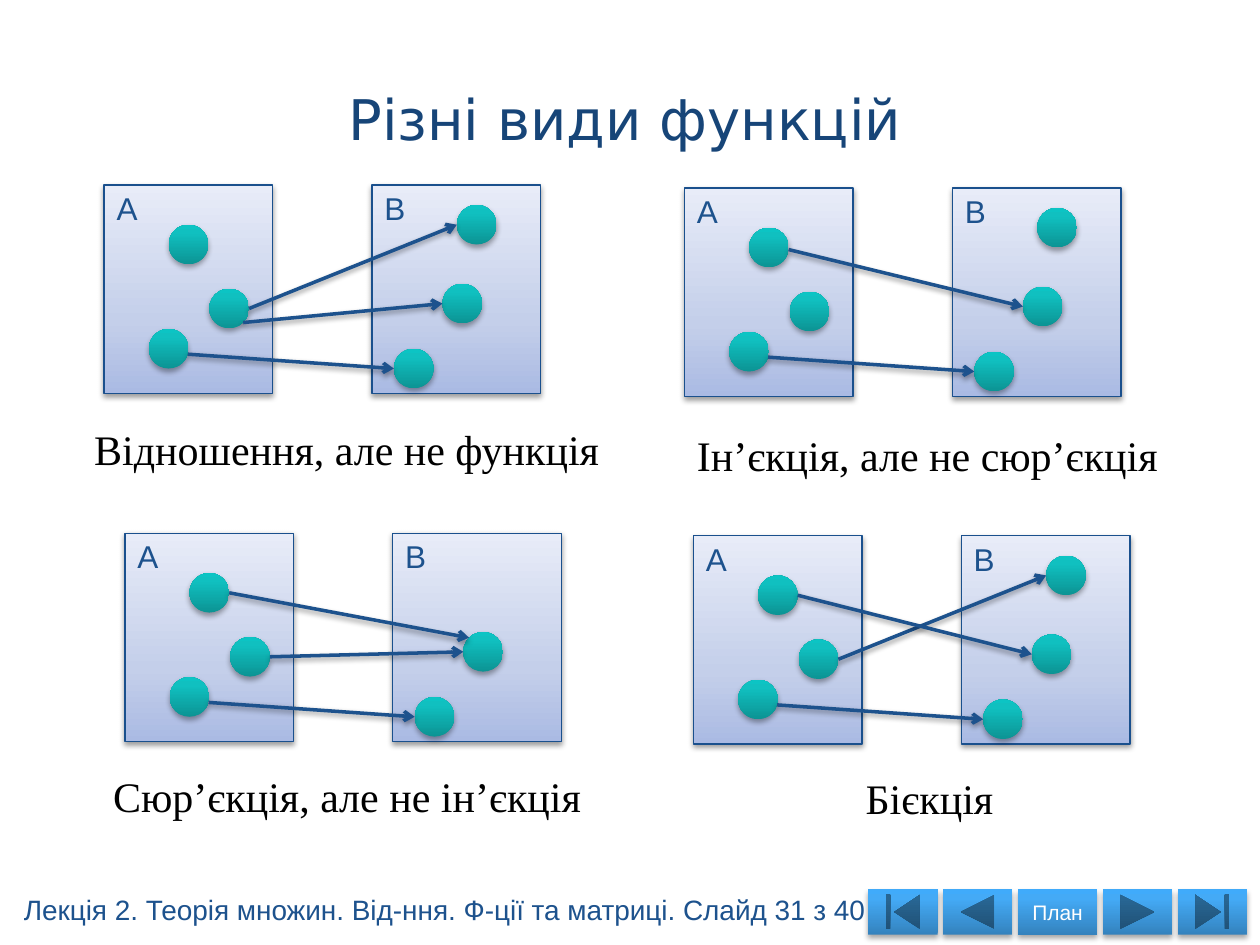
from dataclasses import dataclass
from math import cos, radians, sin

from pptx import Presentation
from pptx.dml.color import RGBColor
from pptx.enum.shapes import MSO_CONNECTOR as Link, MSO_SHAPE as Kind
from pptx.enum.text import MSO_ANCHOR as Anchor, MSO_AUTO_SIZE as Auto, PP_ALIGN as Align
from pptx.oxml import parse_xml
from pptx.oxml.ns import nsdecls
from pptx.util import Cm, Pt


@dataclass(frozen=True)
class Theme:
    title: str = "174578"
    ink: str = "1D528D"
    edge: str = "1A508D"
    black: str = "000000"
    white: str = "FFFFFF"
    panel: tuple = ((0, "AABAE3"), (35, "C4CFEA"), (100, "E8ECF8"))
    ball: tuple = ((0, "0C9494"), (80, "10C0C0"), (100, "0CC4C4"))
    key: tuple = ((0, "3483BE"), (80, "44AAF6"), (100, "40ABFB"))
    soft: tuple = (38, 20000)
    deep: tuple = (35, 23000)
    sans: str = "Arial"
    serif: str = "Times New Roman"
    head: str = "DejaVu Sans"
    huge: int = 32
    big: int = 24
    mid: int = 18
    note: int = 16
    tiny: int = 12


def write(frame, text, size, font, color, align=Align.LEFT, anchor=Anchor.TOP, wrap=False):
    frame.word_wrap = wrap
    frame.vertical_anchor = anchor
    par = frame.paragraphs[0]
    par.alignment = align
    run = par.add_run()
    run.text = text
    run.font.size = Pt(size)
    run.font.name = font
    run.font.color.rgb = RGBColor.from_string(color)


def shade(props, depth):
    alpha, dist = depth
    props.append(parse_xml(
        f'<a:effectLst {nsdecls("a")}><a:outerShdw blurRad="40000" dist="{dist}" '
        f'dir="5400000" rotWithShape="0"><a:srgbClr val="000000">'
        f'<a:alpha val="{alpha * 1000}"/></a:srgbClr></a:outerShdw></a:effectLst>'))


def blend(props, stops):
    marks = "".join(f'<a:gs pos="{pos * 1000}"><a:srgbClr val="{color}"/></a:gs>'
                    for pos, color in stops)
    props.append(parse_xml(
        f'<a:gradFill {nsdecls("a")} rotWithShape="1"><a:gsLst>{marks}</a:gsLst>'
        f'<a:lin ang="16200000" scaled="0"/></a:gradFill>'))


class Board:
    def __init__(self, slide, theme):
        self.slide = slide
        self.theme = theme

    def title(self, text, x, y, wide, high):
        head = self.slide.shapes.title
        head.left, head.top, head.width, head.height = map(Cm, (x, y, wide, high))
        look = self.theme
        write(head.text_frame, text, look.huge, look.head, look.title,
              align=Align.CENTER, anchor=Anchor.MIDDLE, wrap=True)

    def group(self):
        return self.slide.shapes.add_group_shape()

    def shape(self, home, kind, x, y, wide, high, stops, depth, edge=None):
        item = home.shapes.add_shape(kind, Cm(x), Cm(y), Cm(wide), Cm(high))
        props = item._element.spPr
        blend(props, stops)
        if edge:
            item.line.color.rgb = RGBColor.from_string(edge)
            item.line.width = Pt(0.75)
        else:
            item.line.fill.background()
        shade(props, depth)
        return item

    def text(self, home, text, x, y, wide, high, size, font, color):
        box = home.shapes.add_textbox(Cm(x), Cm(y), Cm(wide), Cm(high))
        write(box.text_frame, text, size, font, color)
        box.text_frame.auto_size = Auto.SHAPE_TO_FIT_TEXT

    def arrow(self, start, end):
        line = self.slide.shapes.add_connector(Link.STRAIGHT, *map(Cm, start + end))
        line.line.color.rgb = RGBColor.from_string(self.theme.ink)
        line.line.width = Pt(2)
        props = line._element.spPr
        props.get_or_add_ln().append(parse_xml(f'<a:tailEnd {nsdecls("a")} type="arrow"/>'))
        shade(props, self.theme.soft)

    def map(self, x, y, dots, links):
        look = self.theme
        home = self.group()
        sides = (("A", x), ("B", x + STEP))
        for _, left in sides:
            self.shape(home, Kind.RECTANGLE, left, y, 3.4, 4.2, look.panel, look.soft, look.edge)
        for dot in dots:
            dx, dy = DOTS[dot]
            self.shape(home, Kind.OVAL, x + dx, y + dy, BALL, BALL, look.ball, look.deep)
        for name, left in sides:
            self.text(home, name, left, y - 0.04, 0.94, 1.02, look.mid, look.sans, look.ink)
        for first, out, last, into in links:
            self.arrow(rim(x, y, first, out), rim(x, y, last, into))

    def keys(self, x, y):
        look = self.theme
        home = self.group()
        for kind, wide, text in KEYS:
            key = self.shape(home, kind, x, y, wide, 0.91, look.key, look.deep)
            if text:
                write(key.text_frame, text, look.tiny, look.sans, look.white,
                      align=Align.CENTER, anchor=Anchor.MIDDLE)
            x += wide + 0.11


def rim(x, y, dot, turn):
    dx, dy = DOTS[dot]
    half = BALL / 2
    angle = radians(turn)
    return x + dx + half * (1 + cos(angle)), y + dy + half * (1 + sin(angle))


STEP = 5.4
BALL = 0.8
DOTS = {
    "a1": (1.3, 0.8), "a2": (2.12, 2.09), "a3": (0.9, 2.9),
    "b1": (7.11, 0.4), "b2": (6.82, 1.99), "b3": (5.84, 3.3),
}
LOW = ("a3", 16, "b3", 180)
MAPS = [
    (2.1, 3.73, DOTS, [("a2", 0, "b1", 180), ("a2", 45, "b2", 180), LOW]),
    (13.8, 3.79, DOTS, [LOW, ("a1", 6, "b2", 180)]),
    (2.52, 10.75, [dot for dot in DOTS if dot != "b1"],
     [LOW, ("a2", 0, "b2", 180), ("a1", 0, "b2", 225)]),
    (13.98, 10.8, DOTS, [LOW, ("a2", 0, "b1", 180), ("a1", 0, "b2", 180)]),
]
NOTES = [
    ("Відношення, але не функція", 1.65, 8.41, 10.8),
    ("Ін’єкція, але не сюр’єкція", 13.8, 8.54, 9.88),
    ("Сюр’єкція, але не ін’єкція", 2.03, 15.4, 10.03),
    ("Бієкція", 17.2, 15.44, 3.23),
]
KEYS = [
    (Kind.ACTION_BUTTON_BEGINNING, 1.4, ""),
    (Kind.ACTION_BUTTON_BACK_OR_PREVIOUS, 1.4, ""),
    (Kind.ACTION_BUTTON_CUSTOM, 1.6, "План"),
    (Kind.ACTION_BUTTON_FORWARD_OR_NEXT, 1.4, ""),
    (Kind.ACTION_BUTTON_END, 1.4, ""),
]


def main():
    deck = Presentation()
    deck.slide_width, deck.slide_height = Cm(25.4), Cm(19.05)
    look = Theme()
    board = Board(deck.slides.add_slide(deck.slide_layouts[5]), look)
    board.title("Різні види функцій", 1.7, 1.6, 21.8, 1.57)
    for plan in MAPS:
        board.map(*plan)
    for text, x, y, wide in NOTES:
        board.text(board.slide, text, x, y, wide, 1.27, look.big, look.serif, look.black)
    board.keys(17.5, 17.93)
    board.text(board.slide, "Лекція 2. Теорія множин. Від-ння. Ф-ції та матриці. Слайд 31 з 40",
               0.23, 17.86, 17.73, 0.94, look.note, look.sans, look.ink)
    deck.save("out.pptx")


if __name__ == "__main__":
    main()
